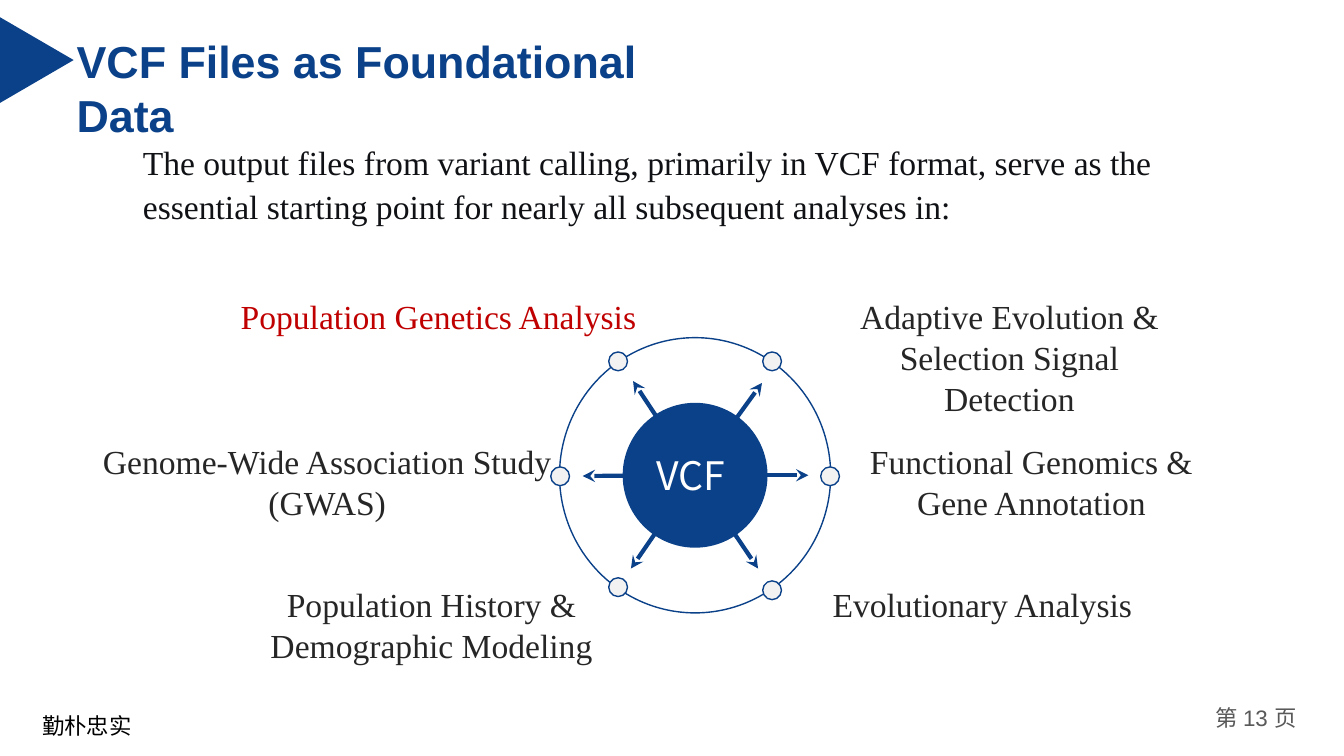
import pptx
import pptx.dml.color
import pptx.enum.shapes
import pptx.enum.text
import pptx.oxml
import pptx.oxml.ns
import pptx.util

Pt = pptx.util.Pt
SHAPE = pptx.enum.shapes.MSO_SHAPE
ALIGN = pptx.enum.text.PP_ALIGN
COLORS = {"blue": "0B4189", "red": "C00000", "label": "262626", "intro": "0F1115",
          "node": "F2F2F2", "page": "595959", "black": "000000", "white": "FFFFFF"}
RGB = {key: pptx.dml.color.RGBColor.from_string(code) for key, code in COLORS.items()}
SERIF, SANS, CJK = "Times New Roman", "Arial", "Noto Sans CJK SC"

deck = pptx.Presentation()
deck.slide_width, deck.slide_height = Pt(960), Pt(540)
slide = deck.slides.add_slide(deck.slide_layouts[6])


def write(frame, lines, size, color, align=ALIGN.LEFT, spacing=None, bold=False):
    """Fill a frame with paragraphs, each a list of (text, font) runs."""
    for index, runs in enumerate(lines):
        paragraph = frame.paragraphs[0] if index == 0 else frame.add_paragraph()
        paragraph.alignment = align
        if spacing:
            paragraph.line_spacing = Pt(spacing)
        for text, typeface in runs:
            run = paragraph.add_run()
            run.text = text
            for key, value in {"size": Pt(size), "bold": bold, "name": typeface}.items():
                setattr(run.font, key, value)
            run.font.color.rgb = RGB[color]
            if typeface == CJK:
                east_asian = pptx.oxml.parse_xml(
                    f'<a:ea {pptx.oxml.ns.nsdecls("a")} typeface="{CJK}"/>')
                run.font._element.append(east_asian)


def draw(kind, left, top, width, height, fill=None, line=None):
    shape = slide.shapes.add_shape(kind, Pt(left), Pt(top), Pt(width), Pt(height))
    shape.shadow.inherit = False
    if fill:
        shape.fill.solid()
        shape.fill.fore_color.rgb = RGB[fill]
    else:
        shape.fill.background()
    if line:
        shape.line.color.rgb = RGB[line]
        shape.line.width = Pt(1)
    else:
        shape.line.fill.background()
    return shape


# Ring, nodes and arrows around the hub
hub_x, hub_y = 496.5, 339.5
ring_w, ring_h, node, hub = 193.7, 196.6, 13.4, 103.5
draw(SHAPE.OVAL, hub_x - ring_w / 2, hub_y - ring_h / 2, ring_w, ring_h, line="blue")

# Offsets from the hub centre: node x, node y, arrow tip x, arrow tip y
spokes = [(55, -81.4, 47.8, -66), (96.4, 0.7, 81, 0), (55, 82.1, 45, 66.6),
          (-55, 79.9, -45.8, 66.6), (-96.4, 0.7, -80.3, 0.5), (-55, -81.4, -44.3, -67.3)]
for node_x, node_y, tip_x, tip_y in spokes:
    draw(SHAPE.OVAL, hub_x + node_x - node / 2, hub_y + node_y - node / 2,
         node, node, "node", "blue")
    arrow = slide.shapes.add_connector(
        pptx.enum.shapes.MSO_CONNECTOR.STRAIGHT,
        Pt(hub_x), Pt(hub_y), Pt(hub_x + tip_x), Pt(hub_y + tip_y))
    arrow.line.color.rgb = RGB["blue"]
    arrow.line.width = Pt(3)
    namespace = pptx.oxml.ns.nsdecls("a")
    arrow.line._get_or_add_ln().append(
        pptx.oxml.parse_xml(f'<a:tailEnd {namespace} type="stealth"/>'))
    arrow._element.spPr.append(pptx.oxml.parse_xml(f"<a:effectLst {namespace}/>"))

vcf = draw(SHAPE.OVAL, hub_x - hub / 2, hub_y - hub / 2, hub, hub, "blue").text_frame
for key, value in {"margin_left": 0, "margin_right": Pt(6), "margin_top": 0,
                   "margin_bottom": 0, "word_wrap": False,
                   "vertical_anchor": pptx.enum.text.MSO_ANCHOR.MIDDLE}.items():
    setattr(vcf, key, value)
write(vcf, [[("VCF", CJK)]], 28, "white", ALIGN.CENTER)

# Analyses: left, top, width, height, colour, lines
row_1, row_2, row_3 = 207.4, 311, 413.3
analyses = [
    (164.2, row_1, 298, 36, "red", ["Population Genetics Analysis"]),
    (586, row_1, 270, 65.5, "label", ["Adaptive Evolution &", "Selection Signal Detection"]),
    (66.2, row_2, 335, 65.5, "label", ["Genome‑Wide Association Study", "(GWAS)"]),
    (614.2, row_2, 245, 65.5, "label", ["Functional Genomics &", "Gene Annotation"]),
    (164.2, row_3, 288, 65.5, "label", ["Population History & Demographic Modeling"]),
    (586.8, row_3, 229.7, 36, "label", ["Evolutionary Analysis"]),
]
for left, top, width, height, color, lines in analyses:
    label = slide.shapes.add_textbox(Pt(left), Pt(top), Pt(width), Pt(height)).text_frame
    label.word_wrap = True
    write(label, [[(line, SERIF)] for line in lines], 24, color, ALIGN.CENTER, 29.3)

# Heading, introduction and footer
draw(SHAPE.ISOSCELES_TRIANGLE, -4.3, 16.6, 61.2, 52.6, "blue").rotation = 90

title = slide.shapes.add_textbox(Pt(47.6), Pt(20.5), Pt(470), Pt(84)).text_frame
title.word_wrap = True
write(title, [[("VCF Files as Foundational Data", SANS)]], 32, "blue", spacing=38.6, bold=True)

intro = slide.shapes.add_textbox(Pt(95), Pt(95), Pt(789), Pt(79)).text_frame
intro.word_wrap = True
write(intro, [[("The output files from variant calling, primarily in VCF format, serve as the "
                "essential starting point for nearly all subsequent analyses in:", SERIF)]],
      24, "intro", spacing=31.7)

motto = slide.shapes.add_textbox(Pt(23), Pt(505.4), Pt(225), Pt(31)).text_frame
write(motto, [[("勤朴忠实", CJK)]], 16, "black")

page = slide.shapes.add_textbox(Pt(854), Pt(499.7), Pt(86.4), Pt(29)).text_frame
page.word_wrap = True
write(page, [[("第 ", CJK), ("13 ", SANS), ("页", CJK)]], 16, "page", ALIGN.CENTER)

deck.save("out.pptx")
